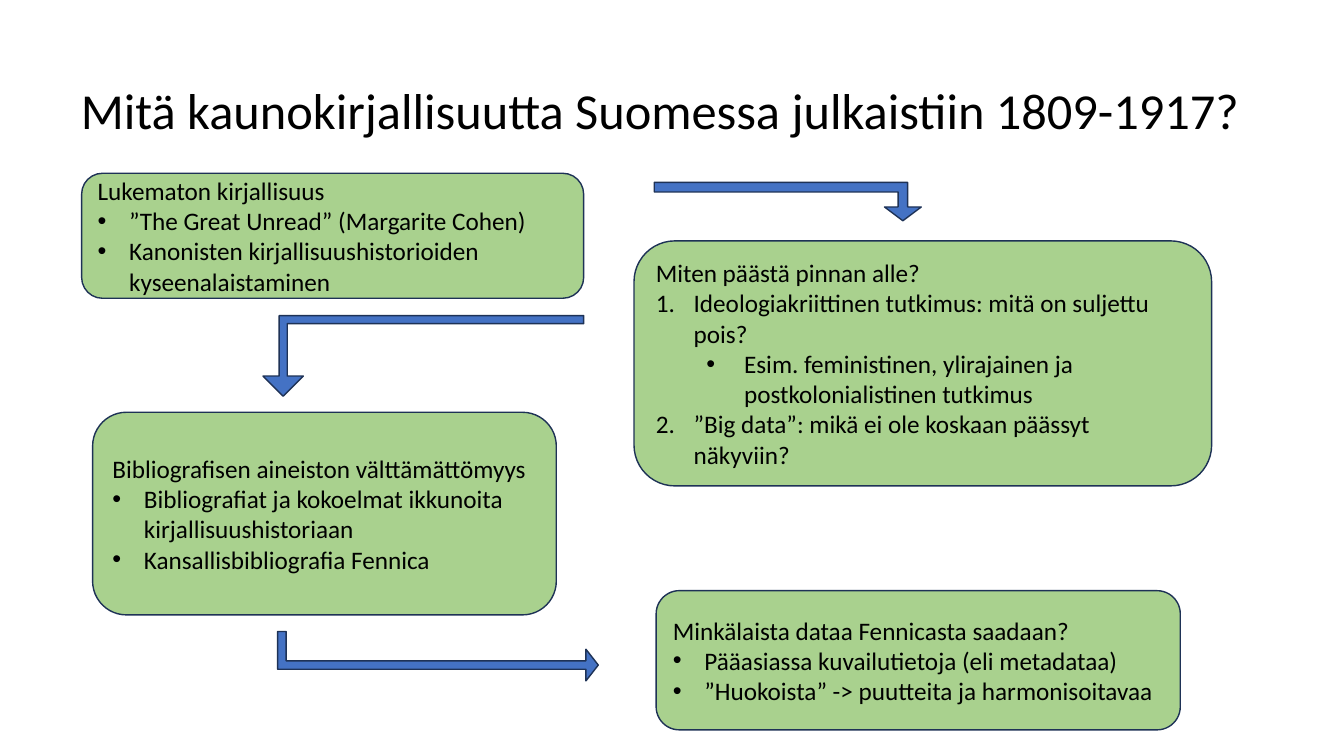
from lxml import etree
from pptx import Presentation
from pptx.dml.color import RGBColor
from pptx.enum.shapes import MSO_SHAPE as Kind
from pptx.enum.text import MSO_ANCHOR as Anchor, PP_ALIGN as Align
from pptx.oxml.ns import qn
from pptx.util import Pt

FONT = "Calibri"
BLACK, GREEN, BLUE, NAVY = "000000", "A9D18E", "4472C4", "1E3256"
TITLE = "Mitä kaunokirjallisuutta Suomessa julkaistiin 1809-1917?"

# Paragraph style: left margin, hanging indent, mark, level
STYLES = {
    "head": (0, 0, None, 0),
    "dot": (22.5, 22.5, "•", 0),
    "num": (27, 27, "1.", 0),
    "sub": (63, 27, "•", 1),
}

# Left, top, width, height, paragraphs
BOXES = [
    (58.3, 123.8, 358.6, 89.3, [
        ("head", "Lukematon kirjallisuus"),
        ("dot", "”The Great Unread” (Margarite Cohen)"),
        ("dot", "Kanonisten kirjallisuushistorioiden kyseenalaistaminen"),
    ]),
    (452.9, 172.1, 412.6, 175, [
        ("head", "Miten päästä pinnan alle?"),
        ("num", "Ideologiakriittinen tutkimus: mitä on suljettu pois?"),
        ("sub", "Esim. feministinen, ylirajainen ja postkolonialistinen tutkimus"),
        ("num", "”Big data”: mikä ei ole koskaan päässyt näkyviin?"),
    ]),
    (66.2, 294.5, 331.2, 144.7, [
        ("head", "Bibliografisen aineiston välttämättömyys"),
        ("dot", "Bibliografiat ja kokoelmat ikkunoita kirjallisuushistoriaan"),
        ("dot", "Kansallisbibliografia Fennica"),
    ]),
    (468.7, 421.9, 374.4, 99.4, [
        ("head", "Minkälaista dataa Fennicasta saadaan?"),
        ("dot", "Pääasiassa kuvailutietoja (eli metadataa)"),
        ("dot", "”Huokoista” -> puutteita ja harmonisoitavaa"),
    ]),
]

# Left, top, width, height, rotation, flipped, adjustments
ARROWS = [
    (187.9, 225.4, 229, 57.6, 180, False, (0.1, 0.25, 0.25)),
    (467.3, 130.3, 190.8, 27.4, 0, True, (0.25, 0.48, 0.36)),
    (295.2, 354.2, 35.3, 229, 90, False, (0.17, 0.32, 0.25)),
]


def color(code):
    return RGBColor.from_string(code)


def add_form(slide, kind, frame, fill):
    form = slide.shapes.add_shape(kind, *map(Pt, frame))
    form.shadow.inherit = False
    form.fill.solid()
    form.fill.fore_color.rgb = color(fill)
    form.line.color.rgb = color(NAVY)
    form.line.width = Pt(1)
    return form


def write(para, text, size):
    para.text = text
    for run in para.runs:
        run.font.name = FONT
        run.font.size = Pt(size)
        run.font.color.rgb = color(BLACK)


def set_mark(para, style):
    """Give a paragraph its level, hanging indent and bullet or number."""
    left, hang, mark, level = STYLES[style]
    para.level = level
    if mark is None:
        return
    props = para._p.get_or_add_pPr()
    props.set("marL", str(Pt(left)))
    props.set("indent", str(-Pt(hang)))
    if mark == "1.":
        etree.SubElement(props, qn("a:buFont"), typeface="+mj-lt")
        etree.SubElement(props, qn("a:buAutoNum"), type="arabicPeriod")
    else:
        etree.SubElement(props, qn("a:buFont"), typeface="Arial")
        etree.SubElement(props, qn("a:buChar"), char=mark)


def add_title(slide):
    box = slide.shapes.add_textbox(Pt(49.7), Pt(28.8), Pt(843.8), Pt(104.4))
    frame = box.text_frame
    frame.word_wrap = True
    frame.vertical_anchor = Anchor.MIDDLE
    para = frame.paragraphs[0]
    para.alignment = Align.CENTER
    para.line_spacing = 0.9
    write(para, TITLE, 36)


def add_box(slide, *frame, lines):
    text = add_form(slide, Kind.ROUNDED_RECTANGLE, frame, GREEN).text_frame
    text.word_wrap = True
    text.vertical_anchor = Anchor.MIDDLE
    for i, (style, line) in enumerate(lines):
        para = text.add_paragraph() if i else text.paragraphs[0]
        para.alignment = Align.LEFT
        write(para, line, 18)
        set_mark(para, style)


def add_arrow(slide, *frame, turn, flip, shape):
    arrow = add_form(slide, Kind.BENT_UP_ARROW, frame, BLUE)
    arrow.rotation = turn
    for i, value in enumerate(shape):
        arrow.adjustments[i] = value
    if flip:
        arrow._element.spPr.find(qn("a:xfrm")).set("flipV", "1")


def main():
    deck = Presentation()
    deck.slide_width, deck.slide_height = Pt(960), Pt(540)
    slide = deck.slides.add_slide(deck.slide_layouts[6])
    add_title(slide)
    for *frame, lines in BOXES:
        add_box(slide, *frame, lines=lines)
    for *frame, turn, flip, shape in ARROWS:
        add_arrow(slide, *frame, turn=turn, flip=flip, shape=shape)
    deck.save("out.pptx")


if __name__ == "__main__":
    main()
